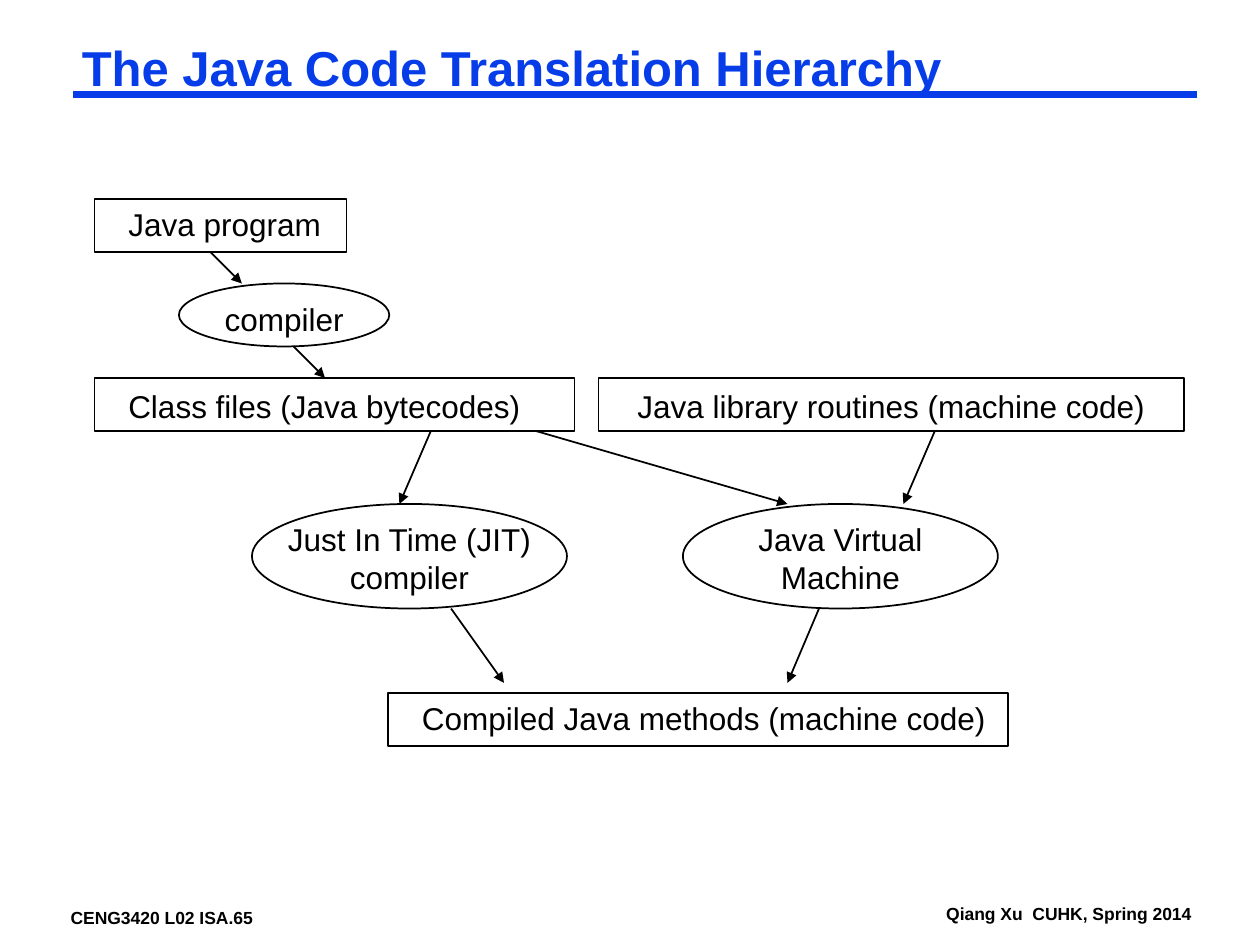
from lxml.etree import SubElement
from pptx import Presentation
from pptx.dml.color import RGBColor
from pptx.enum.shapes import MSO_CONNECTOR as Connector, MSO_SHAPE as Shape
from pptx.enum.text import MSO_ANCHOR as Anchor, PP_ALIGN as Align
from pptx.oxml.ns import qn
from pptx.util import Inches, Pt

COLORS = {"accent": "063DE8", "ink": "000000"}
FONT = "Arial"


def color(name):
    return RGBColor.from_string(COLORS[name])


def add_text(slide, box, text, size=18, ink="ink", bold=False,
             align=Align.LEFT, insets=(0.1, 0.05), spacing=None):
    shape = slide.shapes.add_textbox(*map(Inches, box))
    frame = shape.text_frame
    frame.word_wrap = True
    frame.vertical_anchor = Anchor.TOP
    horizontal, vertical = map(Inches, insets)
    frame.margin_left = horizontal
    frame.margin_right = horizontal if align == Align.CENTER else 0
    frame.margin_top = frame.margin_bottom = vertical
    paragraph = frame.paragraphs[0]
    paragraph.alignment = align
    if spacing:
        paragraph.line_spacing = spacing
    run = paragraph.add_run()
    run.text = text
    run.font.name = FONT
    run.font.size = Pt(size)
    run.font.bold = bold
    run.font.color.rgb = color(ink)


def add_line(slide, start, end, ink="ink", width=1, arrow=False):
    connector = slide.shapes.add_connector(
        Connector.STRAIGHT, *map(Inches, (*start, *end)))
    connector.line.color.rgb = color(ink)
    connector.line.width = Pt(width)
    if arrow:
        SubElement(connector.line._get_or_add_ln(), qn("a:tailEnd"), type="triangle")
    SubElement(connector._element.spPr, qn("a:effectLst"))


def add_node(slide, kind, box, text, text_box, align=Align.LEFT):
    shape = slide.shapes.add_shape(kind, *map(Inches, box))
    shape.shadow.inherit = False
    shape.fill.background()
    shape.line.color.rgb = color("ink")
    shape.line.width = Pt(1)
    add_text(slide, text_box, text, align=align)


def add_header(slide, box):
    left, top, width, height = box
    add_line(slide, (left, top + 0.42), (left + width, top + 0.42), "accent", 4.5)
    add_text(slide, box, "The Java Code Translation Hierarchy", 28, "accent",
             True, insets=(0.07, 0.03), spacing=0.87)


def add_footer(slide, box):
    left, top, width, height = box
    author_width = 2.24
    for text, text_box in (
        ("CENG3420 L02 ISA.65", (left, top + 0.03, 1.62, height)),
        ("Qiang Xu  CUHK, Spring 2014",
         (left + width - author_width, top, author_width, height)),
    ):
        add_text(slide, text_box, text, 10, bold=True, insets=(0.07, 0.03))


def add_diagram(slide, box):
    left, top, width, height = box
    row_height = 0.42
    rectangles = (
        ("Java program", 0, 0, 2, 0.17, 0),
        ("Class files (Java bytecodes)", 0, 1.42, 3.81, 0.17, 0.02),
        ("Java library routines (machine code)", 4, 1.42, width - 4, 0.21, 0.02),
        ("Compiled Java methods (machine code)", 2.33, height - row_height,
         4.92, 0.17, 0),
    )
    for text, x, y, node_width, indent, drop in rectangles:
        add_node(slide, Shape.RECTANGLE,
                 (left + x, top + y, node_width, row_height), text,
                 (left + x + indent, top + y + drop, node_width - indent, 0.4))

    ellipses = (
        ("compiler", 0.67, 0.67, 1.67, 0.5),
        ("Just In Time (JIT) compiler", 1.25, 2.42, 2.5, 0.83),
        ("Java Virtual Machine", 4.67, 2.42, 2.5, 0.83),
    )
    for text, x, y, node_width, node_height in ellipses:
        add_node(slide, Shape.OVAL,
                 (left + x, top + y, node_width, node_height), text,
                 (left + x + 0.17, top + y + 0.08,
                  node_width - 0.34, node_height - 0.1), Align.CENTER)

    arrows = (
        (0.92, 0.42, 1.17, 0.67),
        (1.58, 1.17, 1.83, 1.42),
        (2.67, 1.84, 2.42, 2.42),
        (3.5, 1.84, 5.5, 2.42),
        (6.67, 1.84, 6.42, 2.42),
        (2.83, 3.25, 3.25, 3.84),
        (5.75, 3.25, 5.5, 3.84),
    )
    for x1, y1, x2, y2 in arrows:
        add_line(slide, (left + x1, top + y1), (left + x2, top + y2), arrow=True)


def main():
    presentation = Presentation()
    presentation.slide_width = Inches(10)
    presentation.slide_height = Inches(7.5)
    slide = presentation.slides.add_slide(presentation.slide_layouts[6])
    add_footer(slide, (0.49, 7.14, 9.19, 0.22))
    add_header(slide, (0.58, 0.33, 8.92, 0.46))
    add_diagram(slide, (0.75, 1.58, 8.65, 4.34))
    presentation.save("out.pptx")


if __name__ == "__main__":
    main()
